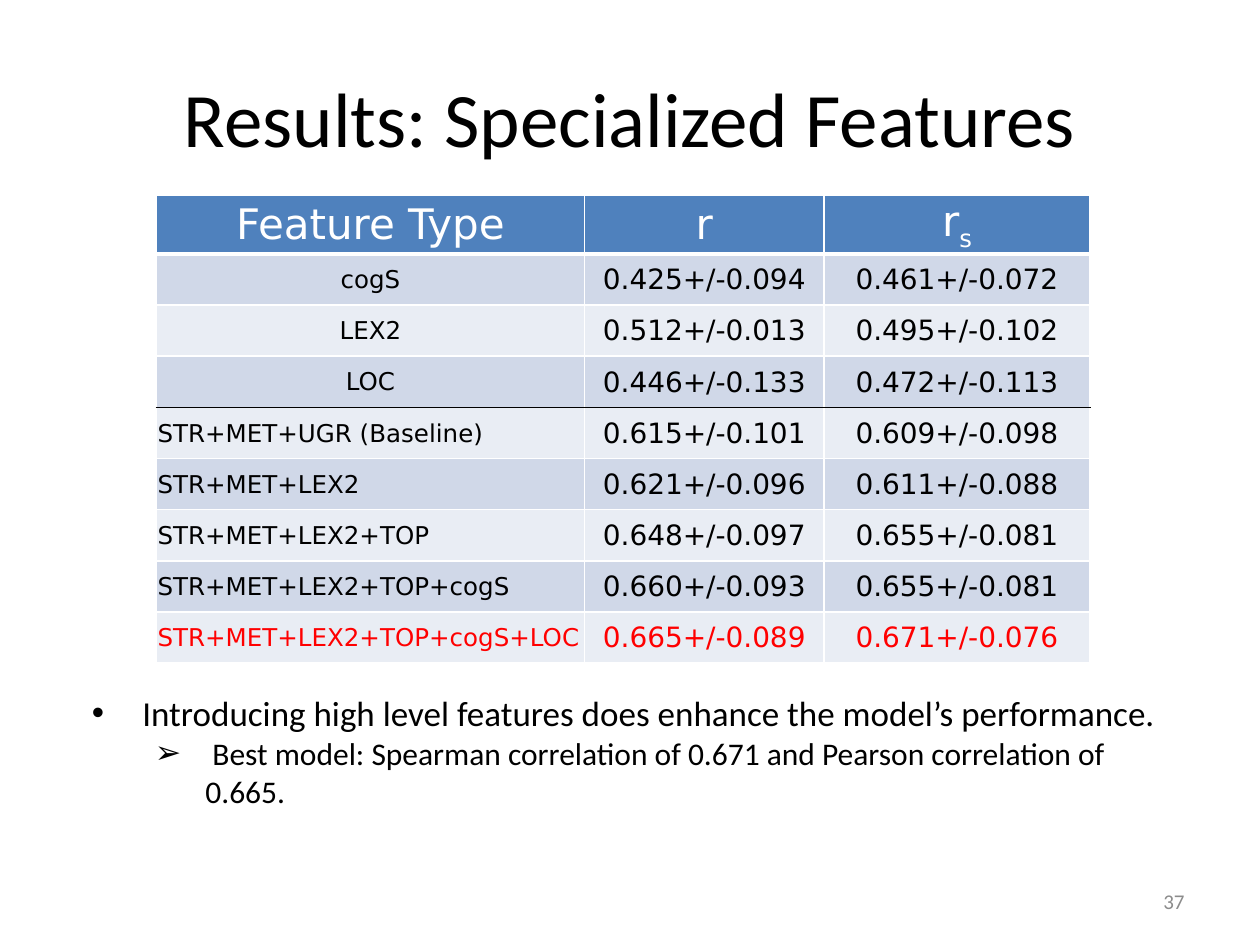
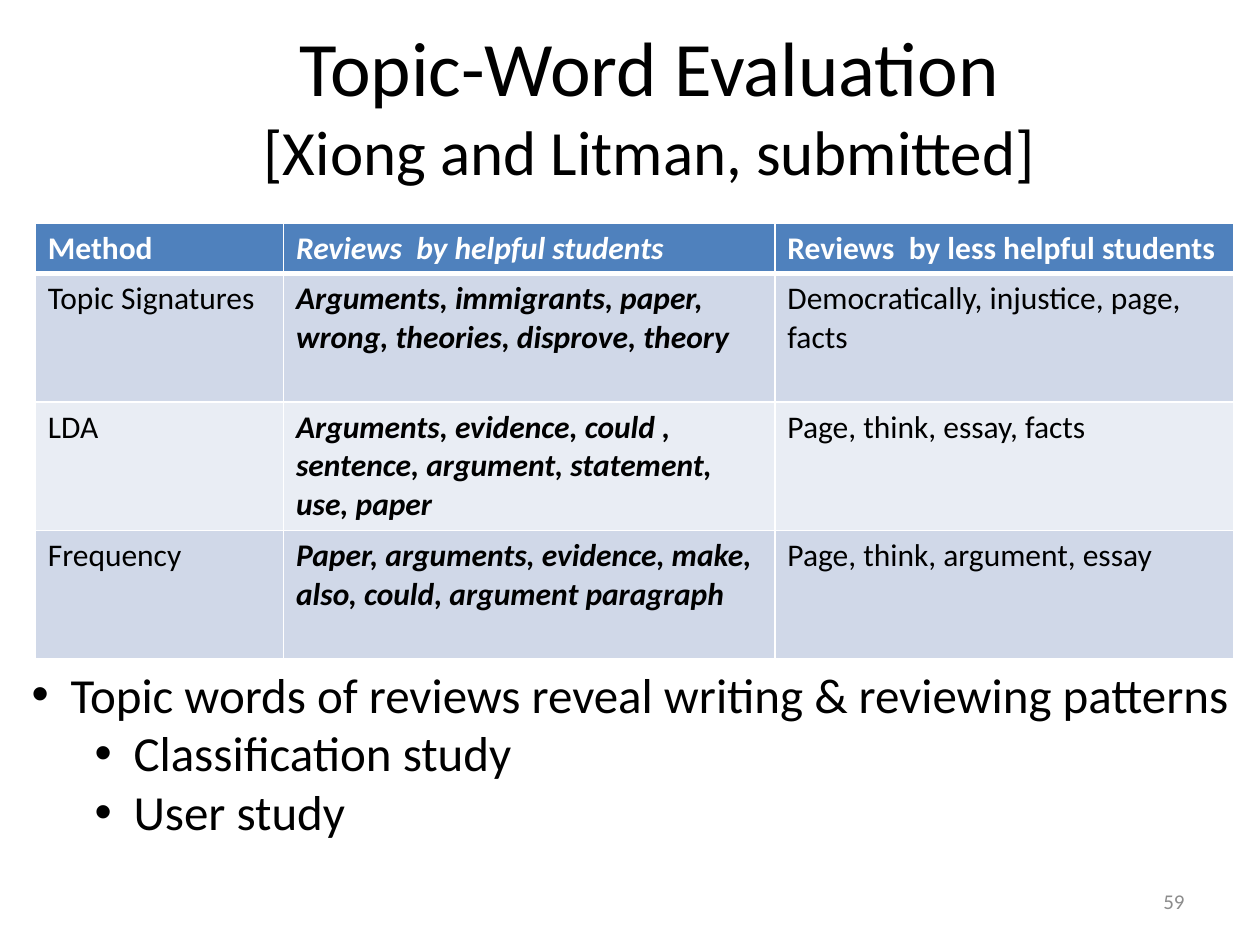
from lxml.etree import SubElement
from pptx import Presentation
from pptx.dml.color import RGBColor
from pptx.enum.text import MSO_ANCHOR as Anchor, MSO_AUTO_SIZE as AutoSize, PP_ALIGN as Align
from pptx.oxml.ns import qn
from pptx.util import Inches, Pt

COLOURS = {
    "text": "000000", "page": "8C8C8C", "header": "4F81BD", "header text": "FFFFFF",
    "odd": "D0D8E8", "even": "E9EDF4", "grid": "FFFFFF", "rule": "000000", "best": "FF0000",
}
BODY_FONT = "Calibri"
RESULTS_FONT = "DejaVu Sans"
GRID_COLUMNS, GRID_ROWS = 100, 75

RESULTS = [
    ["Feature Type", "r", "r"],
    ["cogS", "0.425+/-0.094", "0.461+/-0.072"],
    ["LEX2", "0.512+/-0.013", "0.495+/-0.102"],
    ["LOC", "0.446+/-0.133", "0.472+/-0.113"],
    ["STR+MET+UGR (Baseline)", "0.615+/-0.101", "0.609+/-0.098"],
    ["STR+MET+LEX2", "0.621+/-0.096", "0.611+/-0.088"],
    ["STR+MET+LEX2+TOP", "0.648+/-0.097", "0.655+/-0.081"],
    ["STR+MET+LEX2+TOP+cogS", "0.660+/-0.093", "0.655+/-0.081"],
    ["STR+MET+LEX2+TOP+cogS+LOC", "0.665+/-0.089", "0.671+/-0.076"],
]
BASELINE_ROW = 4
TOPIC_WORDS = [
    ["Method", "Reviews  by helpful students", "Reviews  by less helpful students"],
    ["Topic Signatures", "Arguments, immigrants, paper, wrong, theories, disprove, theory",
     "Democratically, injustice, page, facts"],
    ["LDA", "Arguments, evidence, could , sentence, argument, statement, use, paper",
     "Page, think, essay, facts"],
    ["Frequency", "Paper, arguments, evidence, make, also, could, argument paragraph",
     "Page, think, argument, essay"],
]


def format_text(para, size, colour="text", font=BODY_FONT, bold=False, italic=False,
                align=Align.LEFT):
    para.alignment = align
    for span in para.runs:
        span.font.size, span.font.name = Pt(size), font
        span.font.bold, span.font.italic = bold, italic
        span.font.color.rgb = RGBColor.from_string(COLOURS[colour])


def set_bullet(para, symbol, left, hanging):
    """Give the paragraph a bullet; left and hanging are in inches."""
    properties = para._p.get_or_add_pPr()
    properties.set("marL", str(Inches(left)))
    properties.set("indent", str(-Inches(hanging)))
    SubElement(properties, qn("a:buFont"), typeface="Arial")
    SubElement(properties, qn("a:buChar"), char=symbol)


def set_border(cell, side, colour, width):
    """Draw one side of a cell; sides must come in the order L, R, T, B."""
    line = SubElement(cell._tc.get_or_add_tcPr(), qn(f"a:ln{side}"), w=str(Pt(width)))
    fill = SubElement(line, qn("a:solidFill"))
    SubElement(fill, qn("a:srgbClr"), val=COLOURS[colour])


class Deck:
    """The shared style and the current slide; places are in grid columns and rows."""

    def __init__(self):
        self.file = Presentation()
        self.file.slide_width, self.file.slide_height = Inches(10), Inches(7.5)
        self.column = self.file.slide_width / GRID_COLUMNS
        self.row = self.file.slide_height / GRID_ROWS
        self.slide = None

    def area(self, left, top, width, height):
        return (round(left * self.column), round(top * self.row),
                round(width * self.column), round(height * self.row))

    def move(self, box, at):
        box.left, box.top, box.width, box.height = self.area(*at)
        box.text_frame.word_wrap = True
        box.text_frame.auto_size = AutoSize.NONE

    def start(self, page):
        self.slide = self.file.slides.add_slide(self.file.slide_layouts[1])
        box = self.slide.shapes.add_textbox(*self.area(71.7, 69.5, 23.3, 4))
        box.text_frame.text = str(page)
        box.text_frame.vertical_anchor = Anchor.MIDDLE
        format_text(box.text_frame.paragraphs[0], 12, "page", align=Align.RIGHT)

    def title(self, text, at, subtitle=None):
        box = self.slide.shapes.title
        self.move(box, at)
        box.text_frame.vertical_anchor = Anchor.MIDDLE
        box.text_frame.text = f"{text}\v{subtitle}" if subtitle else text
        para = box.text_frame.paragraphs[0]
        format_text(para, 44, align=Align.CENTER)
        if subtitle:
            para.runs[-1].font.size = Pt(36)

    def bullets(self, at, items):
        """Fill the body; an item is text, level, size, symbol, left and hanging indent."""
        box = self.slide.placeholders[1]
        self.move(box, at)
        frame = box.text_frame
        frame.text = "\n".join(item[0] for item in items)
        for para, (_, level, size, symbol, left, hanging) in zip(frame.paragraphs, items):
            para.level = level
            para.space_before = para.space_after = Pt(0)
            format_text(para, size)
            set_bullet(para, symbol, left, hanging)

    def table(self, at, widths, rows, header_height, row_height, style, rule_above=None):
        """Add a banded table; style(row, column) gives the text format of a cell."""
        frame = self.slide.shapes.add_table(len(rows), len(widths), *self.area(*at))
        table = frame.table
        for column, width in zip(table.columns, widths):
            column.width = round(width * self.column)
        edges = {1: ("grid", 3), rule_above: ("rule", 1)}
        for r, texts in enumerate(rows):
            table.rows[r].height = round((row_height if r else header_height) * self.row)
            band = "header" if r == 0 else "odd" if r % 2 else "even"
            for c, text in enumerate(texts):
                cell = table.cell(r, c)
                cell.text = text
                format_text(cell.text_frame.paragraphs[0], **style(r, c))
                for side, edge in (("L", None), ("R", None), ("T", r), ("B", r + 1)):
                    look = ("grid", 1) if edge is None else edges.get(edge, ("grid", 1))
                    set_border(cell, side, *look)
                cell.fill.solid()
                cell.fill.fore_color.rgb = RGBColor.from_string(COLOURS[band])
        return table


def results_style(row, column):
    size = 24 if row == 0 else 16 if column else 14
    colour = "header text" if row == 0 else "best" if row == len(RESULTS) - 1 else "text"
    left = column == 0 and row >= BASELINE_ROW
    return dict(size=size, colour=colour, font=RESULTS_FONT,
                align=Align.LEFT if left else Align.CENTER)


def topic_style(row, column):
    return dict(size=18, colour="text" if row else "header text",
                bold=row == 0 or column == 1, italic=column == 1)


def build_results(deck):
    deck.start(37)
    deck.title("Results: Specialized Features", (5, 3, 90, 12.5))
    table = deck.table((12.4, 15.5, 74.1, 36.9), (34, 19, 21.1), RESULTS, 4.5, 4.06,
                       results_style, rule_above=BASELINE_ROW)
    for cell in table.iter_cells():
        cell.vertical_anchor = Anchor.MIDDLE
        cell.margin_left = cell.margin_right = cell.margin_top = Inches(0.01)
        cell.margin_bottom = 0
    para = table.cell(0, 2).text_frame.paragraphs[0]
    para.add_run().text = "s"
    format_text(para, **results_style(0, 2))
    para.runs[-1]._r.get_or_add_rPr().set("baseline", "-25000")
    deck.bullets((2.5, 54.4, 92.5, 18), [
        ("Introducing high level features does enhance the model’s performance.",
         0, 20, "•", 0.78, 0.4),
        (" Best model: Spearman correlation of 0.671 and Pearson correlation of 0.665.",
         2, 18, "➢", 1.28, 0.4),
    ])


def build_topic_words(deck):
    deck.start(59)
    deck.title("Topic-Word Evaluation", (5.3, 2, 92.5, 12.5), "[Xiong and Litman, submitted]")
    deck.table((2.8, 17.7, 95.1, 34.5), (19.7, 39, 36.4), TOPIC_WORDS, 3.9, 10.2, topic_style)
    deck.bullets((1.5, 52.2, 97.5, 15.1), [
        ("Topic words of reviews reveal writing & reviewing patterns", 0, 28, "•", 0.31, 0.31),
        ("Classification study", 1, 28, "•", 0.81, 0.31),
        ("User study", 1, 28, "•", 0.81, 0.31),
    ])


def main():
    deck = Deck()
    build_results(deck)
    build_topic_words(deck)
    deck.file.save("out.pptx")


if __name__ == "__main__":
    main()
